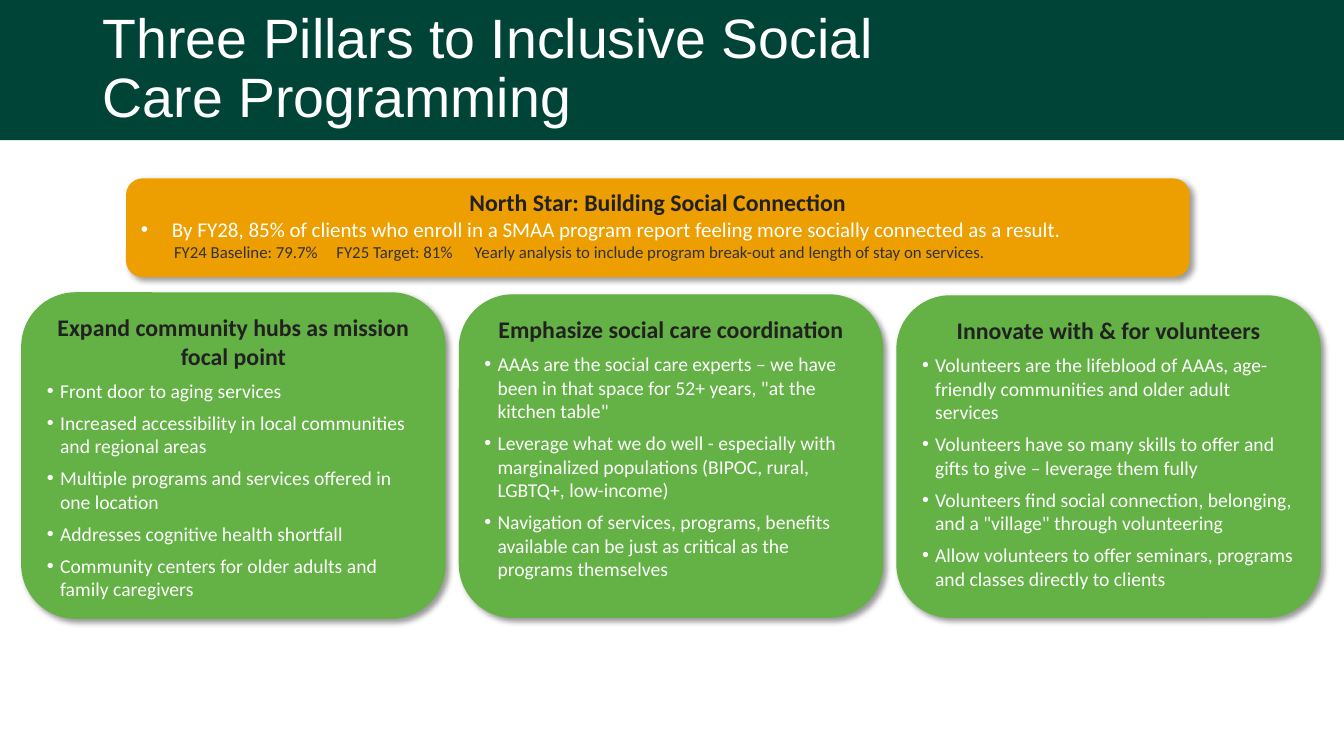
import pptx
import pptx.dml.color
import pptx.enum.shapes
import pptx.enum.text
import pptx.oxml
import pptx.oxml.ns
import pptx.util

COLORS = {"band": "004438", "pillar": "64B145", "star": "ED9E01",
          "white": "FFFFFF", "heading": "212121", "stats": "323232"}
SHAPES = pptx.enum.shapes.MSO_SHAPE
ALIGN = pptx.enum.text.PP_ALIGN
ANCHOR = pptx.enum.text.MSO_ANCHOR
W, H = 13.33, 7.5
BAND_H = 1.39
PILLAR_LEFT, PILLAR_W, PILLAR_PITCH = 0.21, 4.21, 4.34

TITLE = "Three Pillars to Inclusive Social Care Programming"
STAR_HEADING = "North Star: Building Social Connection"
STAR_GOAL = ("By FY28, 85% of clients who enroll in a SMAA program report "
             "feeling more socially connected as a result.")
STAR_STATS = ["FY24 Baseline: 79.7%", "FY25 Target: 81%",
              "Yearly analysis to include program break-out and length of stay on services."]
STAT_TABS = [0.33, 1.94, 3.31]
PILLARS = [
    (2.9, 3.24, "Expand community hubs as mission focal point", [
        "Front door to aging services",
        "Increased accessibility in local communities and regional areas",
        "Multiple programs and services offered in one location",
        "Addresses cognitive health shortfall",
        "Community centers for older adults and family caregivers"]),
    (2.92, 3.21, "Emphasize social care coordination", [
        "AAAs are the social care experts – we have been in that space for 52+ years, "
        "\"at the kitchen table\"",
        "Leverage what we do well - especially with marginalized populations "
        "(BIPOC, rural, LGBTQ+, low-income)",
        "Navigation of services, programs, benefits available can be just as critical "
        "as the programs themselves"]),
    (2.93, 3.2, "Innovate with & for volunteers", [
        "Volunteers are the lifeblood of AAAs, age-friendly communities and older adult services",
        "Volunteers have so many skills to offer and gifts to give – leverage them fully",
        "Volunteers find social connection, belonging, and a \"village\" through volunteering",
        "Allow volunteers to offer seminars, programs and classes directly to clients"]),
]


def inches(*lengths):
    """Convert lengths in inches to slide units."""
    return [pptx.util.Inches(x) for x in lengths]


def style(p, size, color, font="Calibri", bold=False, align=ALIGN.LEFT):
    """Format a paragraph and its runs."""
    p.alignment = align
    for r in p.runs:
        r.font.size = pptx.util.Pt(size)
        r.font.name = font
        r.font.bold = bold
        r.font.color.rgb = pptx.dml.color.RGBColor.from_string(COLORS[color])


def add_ppr_xml(p, xml):
    """Append a DrawingML fragment to the paragraph properties."""
    ns = pptx.oxml.ns.nsdecls("a")
    p._p.get_or_add_pPr().append(pptx.oxml.parse_xml(xml.replace(">", f" {ns}>", 1)))


def add_bullet(p, indent):
    """Give a paragraph a hanging round bullet."""
    ppr = p._p.get_or_add_pPr()
    ppr.set("marL", str(pptx.util.Inches(indent)))
    ppr.set("indent", str(-pptx.util.Inches(indent)))
    add_ppr_xml(p, '<a:buFont typeface="Arial"></a:buFont>')
    add_ppr_xml(p, '<a:buChar char="•"></a:buChar>')


def add_panel(s, kind, box, color):
    """Add a filled shape without outline or shadow."""
    sp = s.shapes.add_shape(kind, *inches(*box))
    sp.fill.solid()
    sp.fill.fore_color.rgb = pptx.dml.color.RGBColor.from_string(COLORS[color])
    sp.line.fill.background()
    sp.shadow.inherit = False
    return sp


def add_card(s, box, color, heading):
    """Add a rounded card with a drop shadow and a centred heading."""
    sp = add_panel(s, SHAPES.ROUNDED_RECTANGLE, box, color)
    effects = sp.element.spPr.find(pptx.oxml.ns.qn("a:effectLst"))
    effects.append(pptx.oxml.parse_xml(
        f'<a:outerShdw {pptx.oxml.ns.nsdecls("a")} blurRad="{pptx.util.Pt(4)}" '
        f'dist="{pptx.util.Pt(3)}" dir="2700000" algn="tl" rotWithShape="0">'
        '<a:srgbClr val="000000"><a:alpha val="40000"/></a:srgbClr></a:outerShdw>'))
    tf = sp.text_frame
    tf.word_wrap = True
    tf.vertical_anchor = ANCHOR.TOP
    p = tf.paragraphs[0]
    p.text = heading
    style(p, 17, "heading", bold=True, align=ALIGN.CENTER)
    return tf


def add_header(s, box):
    """Place the title over a full-width band."""
    left, top, width, height = box
    title = s.shapes.title
    band = add_panel(s, SHAPES.RECTANGLE, box, "band")
    title.element.addprevious(band.element)
    title.left, title.top, title.width, title.height = inches(
        left + 0.92, top, 8.29, height)
    tf = title.text_frame
    tf.text = TITLE
    tf.word_wrap = True
    tf.auto_size = pptx.enum.text.MSO_AUTO_SIZE.NONE
    tf.vertical_anchor = ANCHOR.MIDDLE
    p = tf.paragraphs[0]
    p.line_spacing = 0.9
    style(p, 39.6, "white", font="Arial")


def add_pillar(s, box, heading, points):
    """Add one pillar card with its bullet points."""
    tf = add_card(s, box, "pillar", heading)
    for point in points:
        p = tf.add_paragraph()
        p.text = point
        p.space_before = pptx.util.Pt(6)
        add_bullet(p, 0.13)
        style(p, 14, "white")


def add_north_star(s, box):
    """Add the goal card with its line of tabbed measures."""
    tf = add_card(s, box, "star", STAR_HEADING)
    p = tf.add_paragraph()
    p.text = STAR_GOAL
    add_bullet(p, 0.31)
    style(p, 15, "white")
    p = tf.add_paragraph()
    p.text = "".join("\t" + stat for stat in STAR_STATS)
    stops = "".join(f'<a:tab pos="{pos}" algn="l"/>' for pos in inches(*STAT_TABS))
    add_ppr_xml(p, f"<a:tabLst>{stops}</a:tabLst>")
    style(p, 12, "stats")


def main():
    """Build and save the slide."""
    prs = pptx.Presentation()
    prs.slide_width, prs.slide_height = inches(W, H)
    s = prs.slides.add_slide(prs.slide_layouts[5])
    add_header(s, (0, 0, W, BAND_H))
    for i, (top, height, heading, points) in enumerate(PILLARS):
        box = (PILLAR_LEFT + i * PILLAR_PITCH, top, PILLAR_W, height)
        add_pillar(s, box, heading, points)
    add_north_star(s, (1.25, 1.77, 10.55, 0.98))
    prs.save("out.pptx")


if __name__ == "__main__":
    main()
